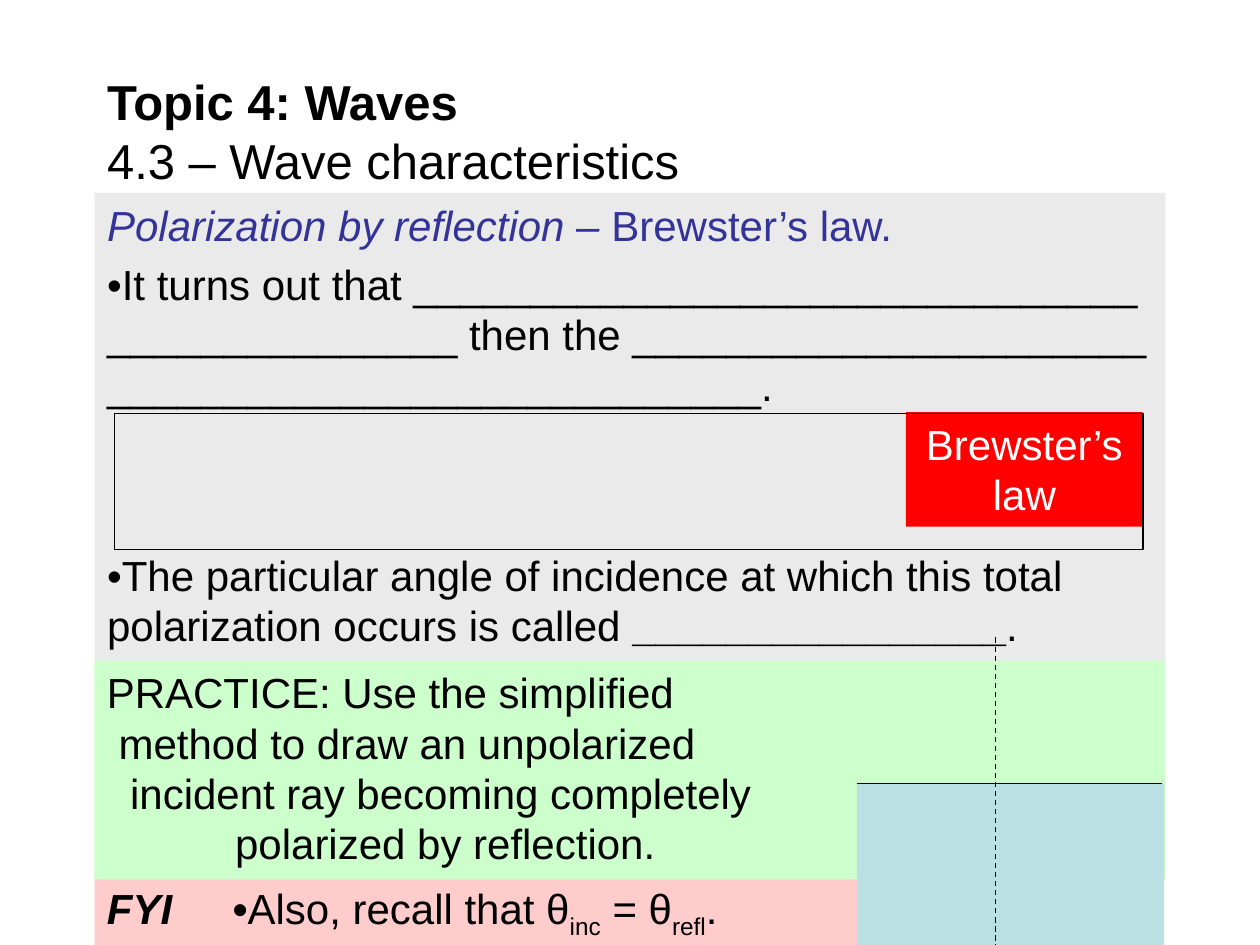
from lxml import etree
from pptx import Presentation
from pptx.dml.color import RGBColor
from pptx.enum import dml, shapes, text
from pptx.oxml import ns
from pptx.util import Pt

BLACK = RGBColor(0, 0, 0)
WHITE = RGBColor(255, 255, 255)
GREY = RGBColor(0xEA, 0xEA, 0xEA)
GREEN = RGBColor(0xCC, 0xFF, 0xCC)
PINK = RGBColor(0xFF, 0xCC, 0xCC)
RED = RGBColor(255, 0, 0)
WATER = RGBColor(0xBB, 0xE0, 0xE3)
NAVY = RGBColor(0x33, 0x33, 0x99)

LEFT, WIDE = 54, 612
PLAIN, BOLD, ITAL, SUB = {}, {"bold": True}, {"italic": True}, {"sub": True}


def place(shape, left, top, width, height):
    """Move and size a shape, in points."""
    shape.left, shape.top = Pt(left), Pt(top)
    shape.width, shape.height = Pt(width), Pt(height)


def box(slide, at, fill=None):
    """Add a rectangle, filled or else outlined."""
    rect = slide.shapes.add_shape(shapes.MSO_SHAPE.RECTANGLE, *map(Pt, at))
    rect.shadow.inherit = False
    if fill is None:
        rect.fill.background()
        rect.line.color.rgb = BLACK
        rect.line.width = Pt(1)
    else:
        rect.fill.solid()
        rect.fill.fore_color.rgb = fill
        rect.line.fill.background()
    return rect


def line(slide, start, end, dash=None):
    """Add a thin black line."""
    rule = slide.shapes.add_connector(
        shapes.MSO_CONNECTOR.STRAIGHT, *map(Pt, start + end))
    rule.line.color.rgb = BLACK
    rule.line.width = Pt(0.75)
    rule.line.dash_style = dash
    etree.SubElement(rule._element.spPr, ns.qn("a:effectLst"))


def frame(shape, anchor=text.MSO_ANCHOR.TOP):
    """Set up a wrapping text frame."""
    tf = shape.text_frame
    tf.word_wrap = True
    tf.auto_size = text.MSO_AUTO_SIZE.NONE
    tf.vertical_anchor = anchor
    return tf


def para(tf, runs, color=BLACK, size=24, gap=0, indent=0, align=text.PP_ALIGN.LEFT):
    """Write the runs as the next paragraph, without an automatic bullet."""
    p = tf.paragraphs[-1]
    if p.runs:
        p = tf.add_paragraph()
    p.alignment = align
    p.space_before = Pt(gap)
    p.font.name, p.font.size = "Arial", Pt(size)
    p.font.color.rgb = color
    ppr = p._p.get_or_add_pPr()
    ppr.set("marL", str(Pt(indent)))
    ppr.set("indent", "0")
    none = etree.Element(ns.qn("a:buNone"))
    ppr.insert(list(ppr).index(ppr.find(ns.qn("a:defRPr"))), none)
    for words, style in runs:
        run = p.add_run()
        run.text = words
        run.font.name, run.font.size = "Arial", Pt(size)
        run.font.color.rgb = color
        run.font.bold = style.get("bold", False)
        run.font.italic = style.get("italic", False)
        if style.get("sub"):
            run._r.get_or_add_rPr().set("baseline", "-25000")
    return p


def tab(p, pos):
    """Set a left tab stop, in points."""
    stops = etree.Element(ns.qn("a:tabLst"))
    etree.SubElement(stops, ns.qn("a:tab"), pos=str(Pt(pos)), algn="l")
    p._p.pPr.find(ns.qn("a:buNone")).addnext(stops)


def head(slide):
    """Fill the title."""
    title = slide.shapes.title
    place(title, LEFT, 41.76, WIDE, 65.5)
    p = para(frame(title, text.MSO_ANCHOR.MIDDLE),
             [("Topic 4: Waves", BOLD), ("4.3 – Wave characteristics", PLAIN)], size=28)
    p.runs[0]._r.addnext(etree.Element(ns.qn("a:br")))


def notes(slide):
    """Fill the body with the lesson points."""
    body = slide.placeholders[1]
    place(body, LEFT, 110.2, WIDE, 267.8)
    body.fill.solid()
    body.fill.fore_color.rgb = GREY
    tf = frame(body)
    para(tf, [("Polarization by reflection – ", ITAL), ("Brewster’s law.", PLAIN)], NAVY)
    blanks = ["_" * n for n in (31, 15, 22, 28)]
    para(tf, [("•It turns out that {} {} then the {} {}.".format(*blanks), PLAIN)], gap=5)
    para(tf, [("•The particular angle of incidence at which this total "
               "polarization occurs is called ", PLAIN),
              ("_" * 16, BOLD), (".", PLAIN)], gap=80)


def task(slide):
    """Add the practice and FYI bands."""
    tf = frame(box(slide, (LEFT, 501, 611, 39), PINK))
    p = para(tf, [("FYI\t", {"bold": True, "italic": True}), ("•", BOLD),
                  ("Also, recall that θ", PLAIN), ("inc", SUB),
                  (" = θ", PLAIN), ("refl", SUB), (".", PLAIN)])
    tab(p, 57)
    tf = frame(box(slide, (LEFT, 377.5, WIDE, 125), GREEN))
    rows = (("PRACTICE: Use the simplified", 0),
            ("method to draw an unpolarized", 6.7),
            ("incident ray becoming completely", 13.3),
            ("polarized by reflection.", 73.3))
    for words, indent in rows:
        para(tf, [(words, PLAIN)], indent=indent)


def sketch(slide):
    """Draw the water, its surface and the normal."""
    box(slide, (489.6, 447.8, 175.7, 92.2), WATER)
    line(slide, (489.6, 447.8), (663.8, 447.8))
    line(slide, (568.8, 364.3), (568.8, 540), dml.MSO_LINE.DASH)


def law(slide):
    """Add the formula frame with its label."""
    tag = box(slide, (517.7, 235.5, 135.3, 65.5), RED)
    para(frame(tag), [("Brewster’s law", PLAIN)], WHITE, align=text.PP_ALIGN.CENTER)
    box(slide, (65.5, 236.2, 587.5, 77.8))


def main():
    """Build and save the slide."""
    deck = Presentation()
    deck.slide_width, deck.slide_height = Pt(720), Pt(540)
    slide = deck.slides.add_slide(deck.slide_layouts[1])
    for part in (head, notes, task, sketch, law):
        part(slide)
    deck.save("out.pptx")


if __name__ == "__main__":
    main()
